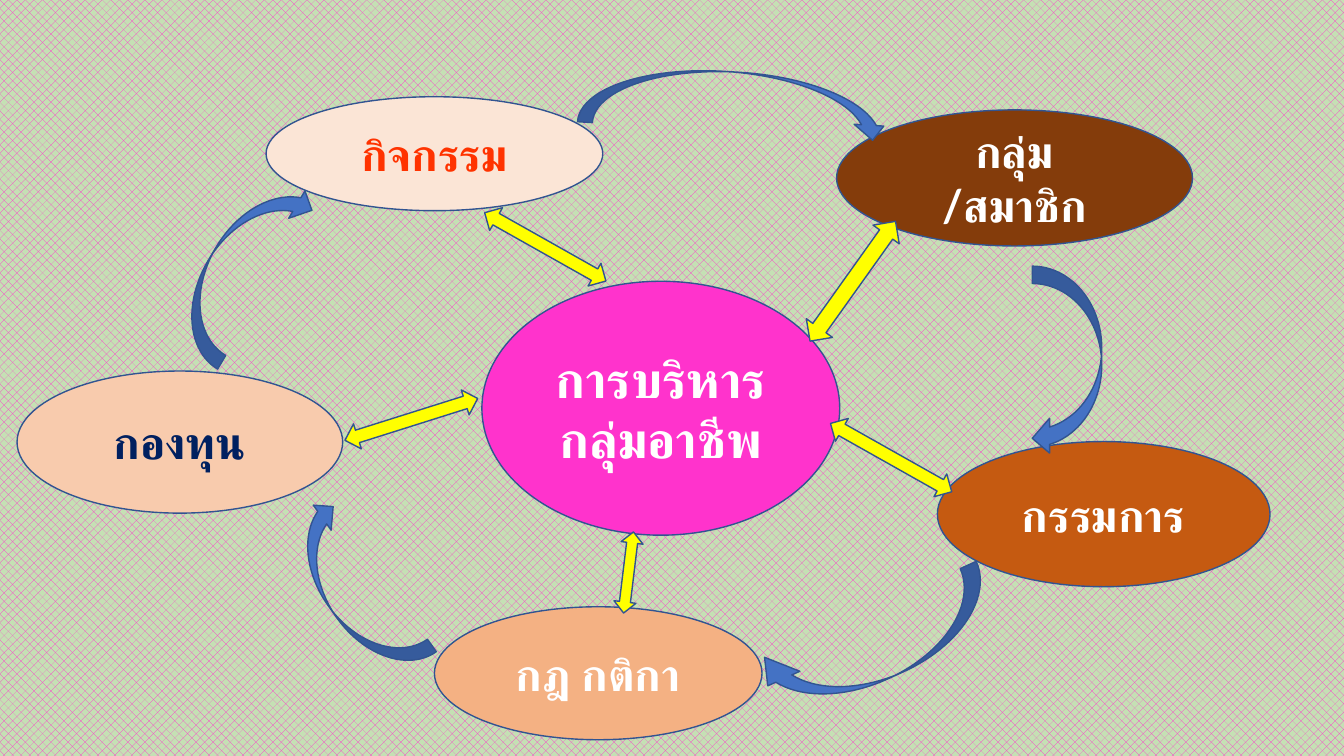
from lxml.etree import SubElement
from pptx import Presentation
from pptx.dml.color import RGBColor
from pptx.enum.dml import MSO_PATTERN
from pptx.enum.shapes import MSO_SHAPE
from pptx.enum.text import MSO_ANCHOR, PP_ALIGN
from pptx.oxml.ns import qn
from pptx.util import Pt

FONT = "Lato"
OUTLINE, CYCLE_BLUE, LINK_YELLOW = "325491", "4472C4", "FFFF00"

# Text, left, top, width, height, fill, text colour, text size
TOPICS = [
    ("การบริหารกลุ่มอาชีพ", 344.2, 200.9, 255.6, 181.4, "FF33CC", "FFFFFF", 36),
    ("กลุ่ม /สมาชิก", 597.6, 78.5, 254.2, 97.2, "843C0B", "FFFFFF", 32),
    ("กรรมการ", 669.6, 315.4, 237.6, 103.7, "C55A11", "FFFFFF", 32),
    ("กฎ กติกา", 310.3, 433.4, 234, 95, "F4B183", "FFFFFF", 32),
    ("กองทุน", 12.2, 265, 232.6, 101.5, "F8CBAD", "002060", 32),
    ("กิจกรรม", 190.1, 69.1, 240.5, 81.4, "FBE5D6", "FF3300", 32),
]

# Left, top, width, height, rotation, head length
CYCLE_ARROWS = [
    (737.3, 190.1, 49.7, 135.4, 0, 0.25),
    (601.2, 371.5, 50.4, 178.6, 65.6, 0.387),
    (231.8, 352.8, 43.9, 138.2, 144.6, 0.25),
    (149.8, 118.8, 45.4, 143.3, 210.7, 0.25),
    (503.3, -38.2, 42.5, 221.8, 273.6, 0.25),
]

# Left, top, width, height, rotation
CENTRE_LINKS = [
    (556.6, 189.4, 105.1, 23, 305.5),
    (586.8, 317.5, 99.4, 18.7, 209.4),
    (339.8, 167, 99.4, 18.7, 209.4),
    (419.8, 401, 58.3, 15.8, 96.9),
    (244.1, 290.2, 99.4, 18.7, 162.5),
]


def rgb(code):
    return RGBColor.from_string(code)


def add_outlined(slide, kind, box, fill, rotation=0):
    shape = slide.shapes.add_shape(kind, *map(Pt, box))
    shape.shadow.inherit = False
    shape.rotation = rotation
    shape.fill.solid()
    shape.fill.fore_color.rgb = rgb(fill)
    shape.line.color.rgb = rgb(OUTLINE)
    shape.line.width = Pt(1)
    return shape


def add_topic(slide, text, left, top, width, height, fill, colour, size):
    topic = add_outlined(slide, MSO_SHAPE.OVAL, (left, top, width, height), fill)
    frame = topic.text_frame
    frame.word_wrap = True
    frame.vertical_anchor = MSO_ANCHOR.MIDDLE
    paragraph = frame.paragraphs[0]
    paragraph.alignment = PP_ALIGN.CENTER
    run = paragraph.add_run()
    run.text = text
    for name, value in {"name": FONT, "size": Pt(size), "bold": True}.items():
        setattr(run.font, name, value)
    run.font.color.rgb = rgb(colour)
    # Thai letters take the complex-script font
    SubElement(run.font._element, qn("a:cs"), typeface=FONT)


def add_cycle_arrow(slide, left, top, width, height, rotation, head):
    arrow = add_outlined(slide, MSO_SHAPE.CURVED_LEFT_ARROW,
                         (left, top, width, height), CYCLE_BLUE, rotation)
    arrow.adjustments[2] = head


def add_centre_link(slide, left, top, width, height, rotation):
    add_outlined(slide, MSO_SHAPE.LEFT_RIGHT_ARROW,
                 (left, top, width, height), LINK_YELLOW, rotation)


def set_background(slide):
    fill = slide.background.fill
    fill.patterned()
    fill.pattern = MSO_PATTERN.from_xml("pct40")
    fill.fore_color.rgb = rgb("FF33CC")
    fill.back_color.rgb = rgb("C5E0B4")


def main():
    deck = Presentation()
    deck.slide_width, deck.slide_height = Pt(960), Pt(540)
    slide = deck.slides.add_slide(deck.slide_layouts[6])
    set_background(slide)

    # Centre and the five topics around it
    for topic in TOPICS:
        add_topic(slide, *topic)

    # Cycle from topic to topic
    for arrow in CYCLE_ARROWS:
        add_cycle_arrow(slide, *arrow)

    # Two-way links with the centre
    for link in CENTRE_LINKS:
        add_centre_link(slide, *link)

    deck.save("out.pptx")


if __name__ == "__main__":
    main()
